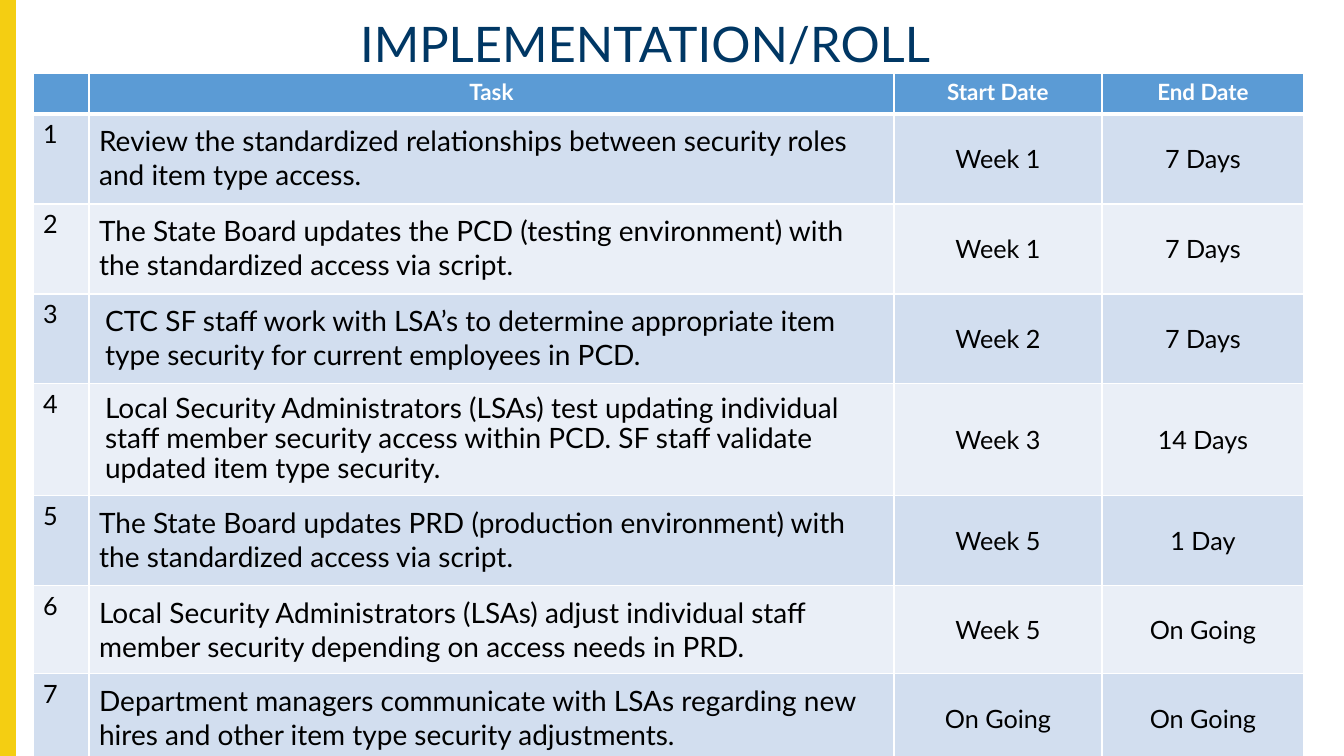
import pptx
import pptx.dml.color
import pptx.enum.shapes
import pptx.enum.text
import pptx.oxml
import pptx.oxml.ns
import pptx.util

PX = 914400 / 100.8
FONT = "Lato"
WHITE, BLACK, NAVY, YELLOW = "FFFFFF", "000000", "003764", "F4CE12"
HEADER_FILL = "5B9BD5"
BAND_FILLS = ["D2DEEF", "EAEFF7"]
INDENT = 6
COLUMN_WIDTHS = [56, 805, 208, 202]
ROW_HEIGHTS = [41, 90, 90, 90, 112, 90, 88, 90]
HEADINGS = ["", "Task", "Start Date", "End Date"]
TASKS = [
    ("Review the standardized relationships between security roles and item type access.",
     "Week 1", "7 Days"),
    ("The State Board updates the PCD (testing environment) with the standardized access via script.",
     "Week 1", "7 Days"),
    ("CTC SF staff work with LSA’s to determine appropriate item type security for current employees in PCD.",
     "Week 2", "7 Days"),
    ("Local Security Administrators (LSAs) test updating individual staff member security access "
     "within PCD. SF staff validate updated item type security.",
     "Week 3", "14 Days"),
    ("The State Board updates PRD (production environment) with the standardized access via script.",
     "Week 5", "1 Day"),
    ("Local Security Administrators (LSAs) adjust individual staff member security depending on "
     "access needs in PRD.",
     "Week 5", "On Going"),
    ("Department managers communicate with LSAs regarding new hires and other item type "
     "security adjustments.",
     "On Going", "On Going"),
]
LEFT = pptx.enum.text.PP_ALIGN.LEFT
CENTER = pptx.enum.text.PP_ALIGN.CENTER
TOP = pptx.enum.text.MSO_ANCHOR.TOP
MIDDLE = pptx.enum.text.MSO_ANCHOR.MIDDLE


def px(n):
    return pptx.util.Emu(round(n * PX))


def rgb(color):
    return pptx.dml.color.RGBColor.from_string(color)


def add_run(p, text, size, color, bold=False):
    r = p.add_run()
    r.text = text
    r.font.name = FONT
    r.font.size = pptx.util.Pt(size)
    r.font.bold = bold
    r.font.color.rgb = rgb(color)


def indent(p):
    pPr = p._p.get_or_add_pPr()
    pPr.set("marL", str(px(INDENT)))
    pPr.set("indent", "0")


def add_bar(s):
    sp = s.shapes.add_shape(pptx.enum.shapes.MSO_SHAPE.RECTANGLE, 0, 0, px(15), px(756))
    sp.shadow.inherit = False
    sp.fill.solid()
    sp.fill.fore_color.rgb = rgb(YELLOW)
    sp.line.color.rgb = rgb(YELLOW)
    sp.line.width = pptx.util.Pt(1)


def set_title(s, text):
    sp = s.shapes.title
    sp.left, sp.top, sp.width, sp.height = px(344), px(15), px(656), px(58)
    tf = sp.text_frame
    tf.word_wrap = True
    tf.auto_size = pptx.enum.text.MSO_AUTO_SIZE.NONE
    tf.vertical_anchor = TOP
    p = tf.paragraphs[0]
    p.alignment = LEFT
    p.line_spacing = 0.9
    indent(p)
    add_run(p, text, 35, NAVY)


def set_borders(cell, bottom):
    tcPr = cell._tc.get_or_add_tcPr()
    for side, width in zip("LRTB", (1, 1, 1, bottom)):
        tcPr.append(pptx.oxml.parse_xml(
            f'<a:ln{side} {pptx.oxml.ns.nsdecls("a")} w="{pptx.util.Pt(width)}">'
            f'<a:solidFill><a:srgbClr val="{WHITE}"/></a:solidFill></a:ln{side}>'))


def fill_cell(cell, text, size, color, fill, align=LEFT, anchor=TOP, bold=False, bottom=1):
    set_borders(cell, bottom)
    cell.fill.solid()
    cell.fill.fore_color.rgb = rgb(fill)
    cell.vertical_anchor = anchor
    p = cell.text_frame.paragraphs[0]
    p.alignment = align
    if text:
        add_run(p, text, size, color, bold)
    return p


def add_task_table(s):
    frame = s.shapes.add_table(len(ROW_HEIGHTS), len(COLUMN_WIDTHS), px(33), px(73),
                               px(sum(COLUMN_WIDTHS)), px(sum(ROW_HEIGHTS)))
    table = frame.table
    table.horz_banding = False
    for column, width in zip(table.columns, COLUMN_WIDTHS):
        column.width = px(width)
    for row, height in zip(table.rows, ROW_HEIGHTS):
        row.height = px(height)
    for i, heading in enumerate(HEADINGS):
        fill_cell(table.cell(0, i), heading, 16, WHITE, HEADER_FILL, CENTER, bold=True, bottom=3)
    for n, (task, start, end) in enumerate(TASKS, 1):
        fill = BAND_FILLS[(n - 1) % 2]
        fill_cell(table.cell(n, 0), str(n), 18, BLACK, fill)
        cell = table.cell(n, 1)
        cell.margin_top = cell.margin_bottom = px(10)
        p = fill_cell(cell, task, 20, BLACK, fill)
        if n in (3, 4):
            indent(p)
        if n == 4:
            p.line_spacing = 0.9
            p.space_before = pptx.util.Pt(10)
        for i, date in enumerate((start, end), 2):
            fill_cell(table.cell(n, i), date, 18, BLACK, fill, CENTER, MIDDLE)


def main():
    prs = pptx.Presentation()
    prs.slide_width, prs.slide_height = px(1344), px(756)
    s = prs.slides.add_slide(prs.slide_layouts[5])
    add_bar(s)
    set_title(s, "IMPLEMENTATION/ROLL")
    add_task_table(s)
    prs.save("out.pptx")


if __name__ == "__main__":
    main()
